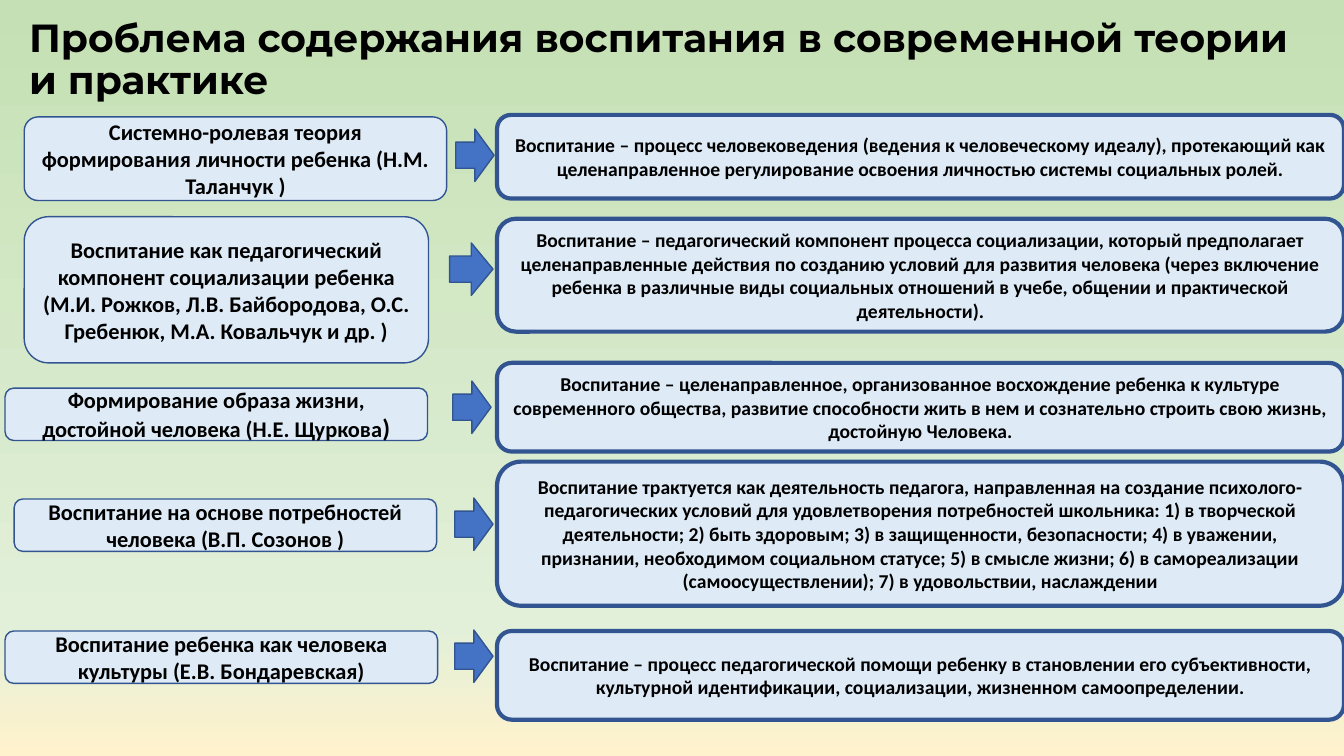
from dataclasses import dataclass

from lxml.etree import SubElement
from pptx import Presentation
from pptx.dml.color import RGBColor
from pptx.enum.shapes import MSO_SHAPE
from pptx.enum.text import MSO_ANCHOR, PP_ALIGN
from pptx.oxml.ns import qn
from pptx.util import Inches, Pt


@dataclass(frozen=True)
class Theme:
    ink: str = "000000"
    box: str = "DEEBF7"
    arrow: str = "4472C4"
    edge: str = "325491"
    sky: tuple = ((0, "C5E0B4"), (83, "E2F0D9"), (100, "FFF2CC"))
    head: str = "Montserrat"
    body: str = "Calibri"
    title: int = 28
    large: int = 18
    theory: int = 16
    sense: int = 14
    thin: int = 1
    thick: int = 3


class Board:
    """Draws on one slide; lengths are grid units of a tenth of an inch."""

    def __init__(self, slide, theme):
        self.slide, self.theme = slide, theme

    def place(self, *units):
        return [Inches(unit / 10) for unit in units]

    def backdrop(self):
        fill = self.slide.background.fill
        fill.gradient()
        fill.gradient_angle = 270
        stops = self.slide.element.find(".//" + qn("a:gsLst"))
        stops.clear()
        for share, color in self.theme.sky:
            stop = SubElement(stops, qn("a:gs"), pos=str(share * 1000))
            SubElement(stop, qn("a:srgbClr"), val=color)

    def label(self, shape, text, size, face, align):
        frame = shape.text_frame
        frame.word_wrap = True
        frame.vertical_anchor = MSO_ANCHOR.MIDDLE
        line = frame.paragraphs[0]
        line.alignment = align
        line.add_run().text = text
        line.font.name, line.font.size, line.font.bold = face, Pt(size), True
        line.font.color.rgb = RGBColor.from_string(self.theme.ink)
        return line

    def title(self, text, *spot):
        shape = self.slide.shapes.add_textbox(*self.place(*spot))
        line = self.label(shape, text, self.theme.title, self.theme.head, PP_ALIGN.LEFT)
        line.line_spacing = 0.9

    def shape(self, kind, spot, fill, width):
        shape = self.slide.shapes.add_shape(kind, *self.place(*spot))
        shape.shadow.inherit = False
        shape.fill.solid()
        shape.fill.fore_color.rgb = RGBColor.from_string(fill)
        shape.line.color.rgb = RGBColor.from_string(self.theme.edge)
        shape.line.width = Pt(width)
        return shape

    def box(self, text, spot, size, width):
        shape = self.shape(MSO_SHAPE.ROUNDED_RECTANGLE, spot, self.theme.box, width)
        return self.label(shape, text, size, self.theme.body, PP_ALIGN.CENTER)

    def theory(self, text, spot, tail=""):
        line = self.box(text, spot, self.theme.theory, self.theme.thin)
        if tail:
            run = line.add_run()
            run.text = tail
            run.font.size = Pt(self.theme.large)

    def sense(self, text, top, height):
        self.box(text, (49.3, top, 84, height), self.theme.sense, self.theme.thick)

    def arrow(self, left, top, width=3.8):
        spot = (left, top, width, 5.2)
        self.shape(MSO_SHAPE.RIGHT_ARROW, spot, self.theme.arrow, self.theme.thin)


# Each row: theory (text, box, larger tail), arrow, meaning (text, top, height)
ROWS = [
    (("Системно-ролевая теория формирования личности ребенка (Н.М. Таланчук )",
      (2.4, 11.6, 41.9, 8.3)),
     (45.2, 12.8),
     ("Воспитание – процесс человековедения (ведения к человеческому идеалу), "
      "протекающий как целенаправленное регулирование освоения личностью "
      "системы социальных ролей.", 11.4, 8.3)),
    (("Воспитание как педагогический компонент социализации ребенка "
      "(М.И. Рожков, Л.В. Байбородова, О.С. Гребенюк, М.А. Ковальчук и др. )",
      (2.4, 21.5, 40.1, 14.5)),
     (44.6, 24.1, 4.3),
     ("Воспитание – педагогический компонент процесса социализации, который "
      "предполагает целенаправленные действия по созданию условий для развития "
      "человека (через включение ребенка в различные виды социальных отношений "
      "в учебе, общении и практической деятельности).", 21.7, 11.2)),
    (("Формирование образа жизни, достойной человека (Н.Е. Щуркова",
      (0.5, 38.5, 41.9, 5.2), ")"),
     (44.9, 37.8),
     ("Воспитание – целенаправленное, организованное восхождение ребенка к "
      "культуре современного общества, развитие способности жить в нем и "
      "сознательно строить свою жизнь, достойную Человека.", 36, 8.8)),
    (("Воспитание на основе потребностей человека (В.П. Созонов )",
      (1.4, 49.5, 41.9, 5.2)),
     (45.1, 49.4),
     ("Воспитание трактуется как деятельность педагога, направленная на создание "
      "психолого-педагогических условий для удовлетворения потребностей "
      "школьника: 1) в творческой деятельности; 2) быть здоровым; 3) в "
      "защищенности, безопасности; 4) в уважении, признании, необходимом "
      "социальном статусе; 5) в смысле жизни; 6) в самореализации "
      "(самоосуществлении); 7) в удовольствии, наслаждении", 45.8, 14.3)),
    (("Воспитание ребенка как человека культуры (Е.В. Бондаревская)",
      (0.5, 62.6, 42.9, 5.2)),
     (45.1, 62.5),
     ("Воспитание – процесс педагогической помощи ребенку в становлении его "
      "субъективности, культурной идентификации, социализации, жизненном "
      "самоопределении.", 62.6, 8.8)),
]


def main():
    deck = Presentation()
    deck.slide_width, deck.slide_height = Inches(13.33), Inches(7.5)
    board = Board(deck.slides.add_slide(deck.slide_layouts[6]), Theme())

    # Backdrop and title
    board.backdrop()
    board.title("Проблема содержания воспитания в современной теории и практике",
                1.9, 4, 129.5, 4.1)

    # Theories and their meanings
    for theory, arrow, sense in ROWS:
        board.theory(*theory)
        board.arrow(*arrow)
        board.sense(*sense)

    deck.save("out.pptx")


if __name__ == "__main__":
    main()
